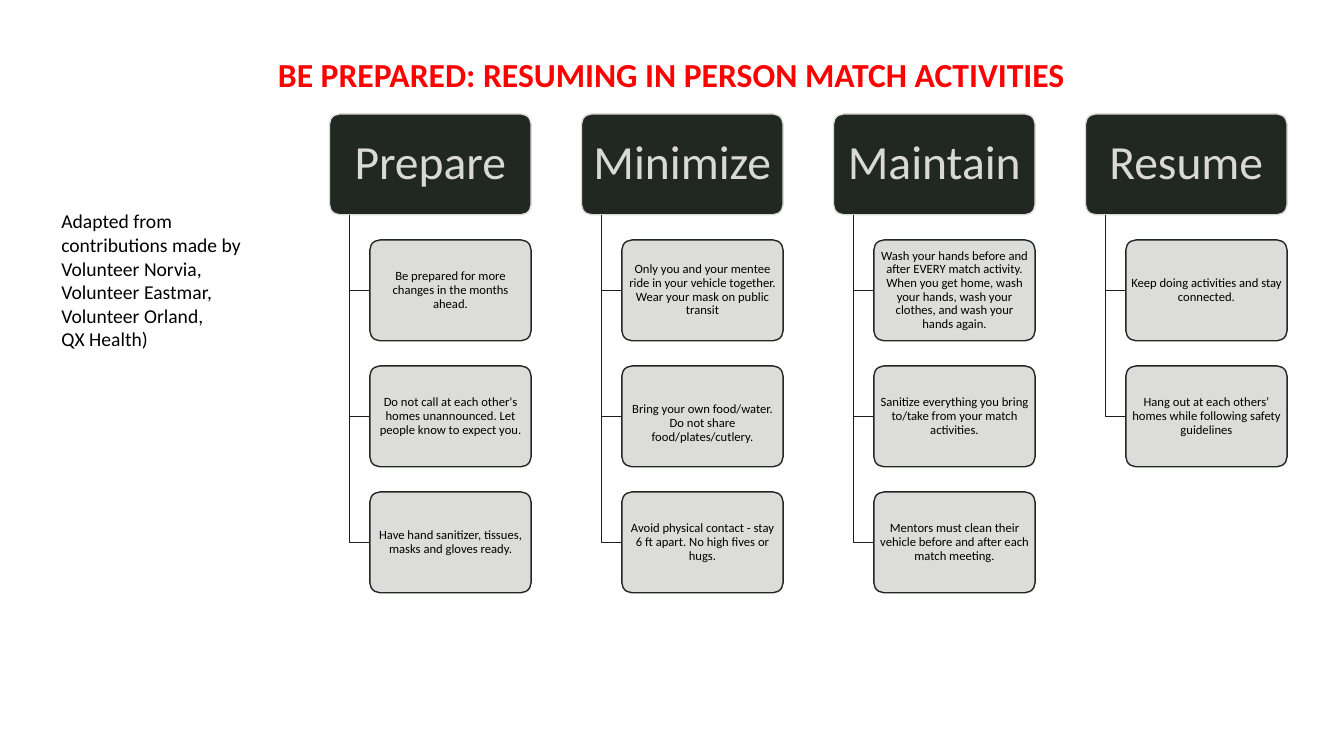
import dataclasses

import lxml.etree
import pptx
import pptx.dml.color
import pptx.enum.shapes
import pptx.enum.text
import pptx.oxml.ns
import pptx.util

Pt = pptx.util.Pt
SHAPES = pptx.enum.shapes.MSO_SHAPE
ALIGN = pptx.enum.text.PP_ALIGN
ANCHOR = pptx.enum.text.MSO_ANCHOR


@dataclasses.dataclass(frozen=True)
class Theme:
    font: str = "Calibri"
    dark: str = "212721"
    pale: str = "D9D9D6"
    branch: str = "1A1F1A"
    text: str = "000000"
    accent: str = "FF0000"
    title_size: float = 24
    header_size: float = 34
    note_size: float = 14
    card_size: float = 9
    line_width: float = 1
    card_opacity: int = 90


class Board:
    def __init__(self, slide, theme):
        self.s = slide
        self.theme = theme

    def color(self, value):
        return pptx.dml.color.RGBColor.from_string(value)

    def fill_text(self, tf, text, size, color, align, bold=False):
        tf.word_wrap = True
        tf.text = text
        for p in tf.paragraphs:
            p.alignment = align
            for r in p.runs:
                r.font.name = self.theme.font
                r.font.size = Pt(size)
                r.font.bold = bold
                r.font.color.rgb = self.color(color)

    def outline(self, sp, color):
        sp.shadow.inherit = False
        sp.line.color.rgb = self.color(color)
        sp.line.width = Pt(self.theme.line_width)

    def text(self, box, text, size, color, align=ALIGN.LEFT, bold=False):
        sp = self.s.shapes.add_textbox(*map(Pt, box))
        self.fill_text(sp.text_frame, text, size, color, align, bold)

    def box(self, box, text, size, fill, line, color, insets, opacity=100):
        sp = self.s.shapes.add_shape(SHAPES.ROUNDED_RECTANGLE, *map(Pt, box))
        sp.adjustments[0] = 0.1
        sp.fill.solid()
        sp.fill.fore_color.rgb = self.color(fill)
        if opacity < 100:
            qn = pptx.oxml.ns.qn
            srgb = sp.element.find(".//" + qn("a:srgbClr"))
            lxml.etree.SubElement(srgb, qn("a:alpha"), val=str(opacity * 1000))
        self.outline(sp, line)
        tf = sp.text_frame
        tf.vertical_anchor = ANCHOR.MIDDLE
        side, top, bottom = map(Pt, insets)
        tf.margin_left = tf.margin_right = side
        tf.margin_top, tf.margin_bottom = top, bottom
        self.fill_text(tf, text, size, color, ALIGN.CENTER)
        for p in tf.paragraphs:
            p.line_spacing = 0.9

    def header(self, box, text):
        t = self.theme
        self.box(box, text, t.header_size, t.dark, t.pale, t.pale, (5, 3.6, 3.6))

    def card(self, box, text, drop=0):
        t = self.theme
        self.box(box, text, t.card_size, t.pale, t.dark, t.text,
                 (1.5, 1 + drop, 1), t.card_opacity)

    def elbow(self, x, top, bottom, right):
        builder = self.s.shapes.build_freeform(Pt(x), Pt(top))
        builder.add_line_segments(
            [(Pt(x), Pt(bottom)), (Pt(right), Pt(bottom))], close=False)
        sp = builder.convert_to_shape()
        sp.fill.background()
        self.outline(sp, self.theme.branch)


TITLE = "BE PREPARED: RESUMING IN PERSON MATCH ACTIVITIES"
CREDIT = ("Adapted from contributions made by Volunteer Norvia, Volunteer Eastmar,\n"
          "Volunteer Orland,\nQX Health)")
LOWERED = "Bring your own food/water. Do not share food/plates/cutlery."
COLUMNS = {
    "Prepare": [
        "Be prepared for more changes in the months ahead.",
        "Do not call at each other's homes unannounced. Let people know to expect you.",
        "Have hand sanitizer, tissues, masks and gloves ready.",
    ],
    "Minimize": [
        "Only you and your mentee ride in your vehicle together. "
        "Wear your mask on public transit",
        LOWERED,
        "Avoid physical contact - stay 6 ft apart. No high fives or hugs.",
    ],
    "Maintain": [
        "Wash your hands before and after EVERY match activity. When you get home, "
        "wash your hands, wash your clothes, and wash your hands again.",
        "Sanitize everything you bring to/take from your match activities.",
        "Mentors must clean their vehicle before and after each match meeting.",
    ],
    "Resume": [
        "Keep doing activities and stay connected.",
        "Hang out at each others’ homes while following safety guidelines",
    ],
}
LEFT, TOP = 235.4, 81.4
WIDTH, HEIGHT = 144, 72
COLUMN_STEP, ROW_STEP = 180, 90
TRUNK, INDENT = 14.4, 28.8


def main():
    prs = pptx.Presentation()
    prs.slide_width, prs.slide_height = Pt(960), Pt(540)
    theme = Theme()
    board = Board(prs.slides.add_slide(prs.slide_layouts[6]), theme)

    for column, (heading, cards) in enumerate(COLUMNS.items()):
        x = LEFT + column * COLUMN_STEP
        board.header((x, TOP, WIDTH, HEIGHT), heading)
        for row, text in enumerate(cards, start=1):
            y = TOP + row * ROW_STEP
            board.elbow(x + TRUNK, TOP + HEIGHT, y + HEIGHT / 2, x + INDENT)
            board.card((x + INDENT, y, WIDTH - INDENT, HEIGHT), text,
                       drop=10 if text == LOWERED else 0)

    board.text((36.7, 146, 164, 102), CREDIT, theme.note_size, theme.text)
    board.text((8.6, 35.3, 942, 36), TITLE, theme.title_size, theme.accent,
               ALIGN.CENTER, bold=True)
    prs.save("out.pptx")


if __name__ == "__main__":
    main()
